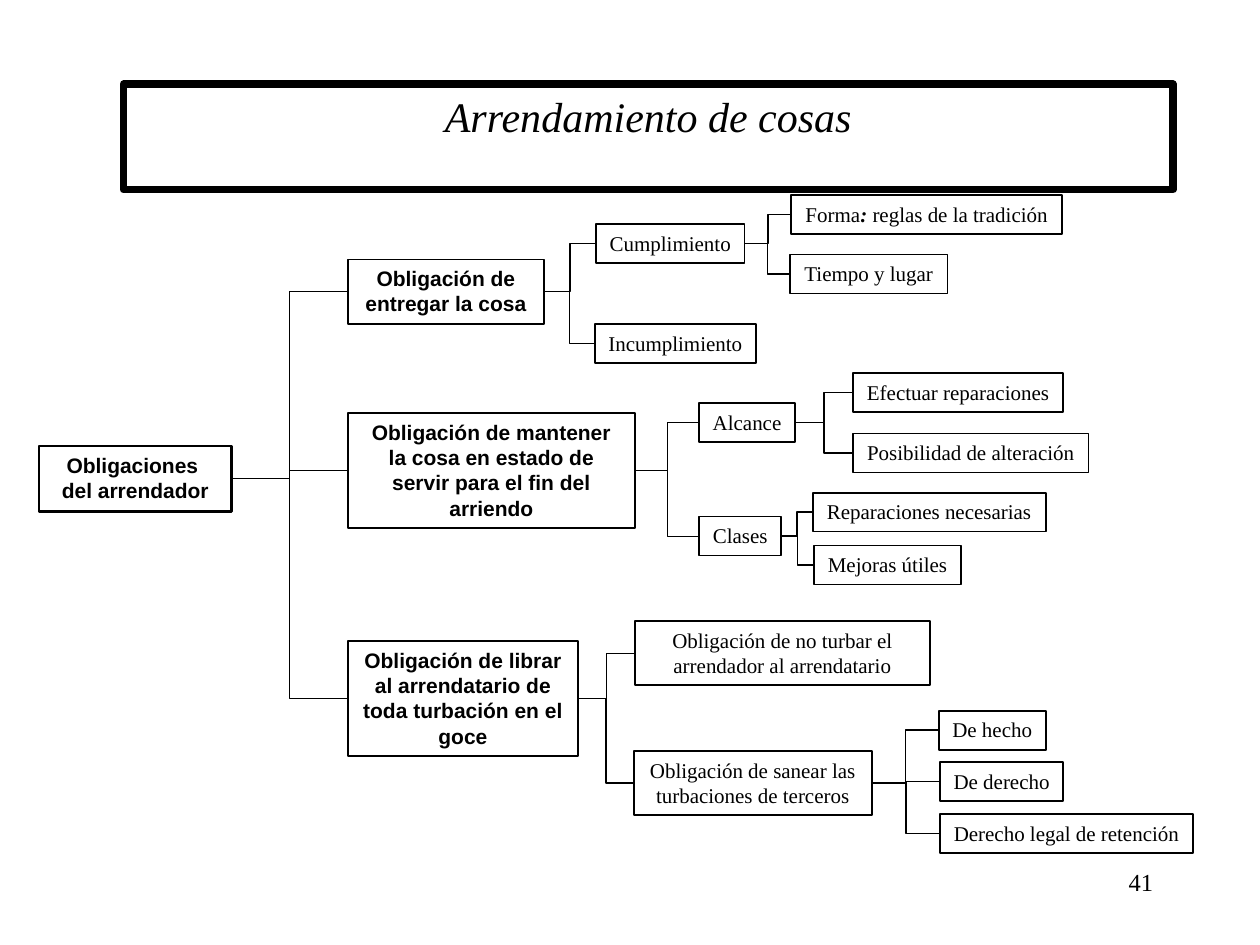
from dataclasses import dataclass

from lxml import etree
from pptx import Presentation
from pptx.dml.color import RGBColor
from pptx.enum.shapes import MSO_CONNECTOR, MSO_SHAPE
from pptx.enum.text import MSO_ANCHOR, MSO_AUTO_SIZE, PP_ALIGN
from pptx.oxml.ns import qn
from pptx.util import Inches, Pt

RECT = MSO_SHAPE.RECTANGLE
ELBOW = MSO_CONNECTOR.ELBOW
TOP = MSO_ANCHOR.TOP
GROW = MSO_AUTO_SIZE.SHAPE_TO_FIT_TEXT
MID, END = PP_ALIGN.CENTER, PP_ALIGN.RIGHT
RIGHT, LEFT = 3, 1  # connection sites of a rectangle

BLACK = "000000"
SERIF = {"name": "Times New Roman", "size": Pt(12), "bold": False, "italic": False}
HEAD = SERIF | {"name": "Arial", "bold": True}
TITLE = SERIF | {"size": Pt(24), "italic": True}
PAGE = SERIF | {"size": Pt(14)}
STRONG = {"bold": True, "italic": True}


@dataclass
class Node:
    key: str
    up: str  # key of the parent, empty for the root
    text: str  # parts between asterisks are strong
    x: float
    y: float
    w: float
    h: float = 0.31
    font: dict = None
    line: float = 1


NODES = [
    Node("root", "", "Obligaciones \ndel arrendador", 0.31, 3.54, 1.53, 0.52, HEAD, 1.5),
    # Delivery
    Node("give", "root", "Obligación de entregar la cosa", 2.76, 2.06, 1.56, 0.51, HEAD),
    Node("done", "give", "Cumplimiento", 4.73, 1.78, 1.18),
    Node("form", "done", "Forma*: *reglas de la tradición", 6.28, 1.55, 2.15),
    Node("time", "done", "Tiempo y lugar", 6.27, 2.02, 1.25),
    Node("fail", "give", "Incumplimiento", 4.72, 2.57, 1.28),
    # Upkeep
    Node("keep", "root", "Obligación de mantener la cosa en estado de servir para el fin del arriendo",
         2.76, 3.28, 2.28, 0.91, HEAD),
    Node("scope", "keep", "Alcance", 5.55, 3.2, 0.76),
    Node("fix", "scope", "Efectuar reparaciones", 6.77, 2.96, 1.67),
    Node("alter", "scope", "Posibilidad de alteración", 6.77, 3.44, 1.87),
    Node("kinds", "keep", "Clases", 5.55, 4.1, 0.65),
    Node("need", "kinds", "Reparaciones necesarias", 6.45, 3.91, 1.85),
    Node("use", "kinds", "Mejoras útiles", 6.46, 4.33, 1.17),
    # Quiet enjoyment
    Node("free", "root", "Obligación de librar al arrendatario de toda turbación en el goce",
         2.76, 5.09, 1.83, 0.91, HEAD),
    Node("calm", "free", "Obligación de no turbar el arrendador al arrendatario", 5.04, 4.93, 2.34, 0.51),
    Node("cure", "free", "Obligación de sanear las turbaciones de terceros", 5.03, 5.96, 1.89, 0.51),
    Node("fact", "cure", "De hecho", 7.45, 5.64, 0.85),
    Node("law", "cure", "De derecho", 7.46, 6.05, 0.98),
    Node("hold", "cure", "Derecho legal de retención", 7.46, 6.46, 2.01),
]


def ink(code: str) -> RGBColor:
    return RGBColor.from_string(code)


def style(item, values: dict) -> None:
    for name, value in values.items():
        setattr(item, name, value)


def write(shape, text: str, font: dict, align=MID, wrap: bool = True) -> None:
    frame = shape.text_frame
    style(frame, {"word_wrap": wrap, "auto_size": GROW, "vertical_anchor": TOP})
    for row, words in enumerate(text.split("\n")):
        para = frame.add_paragraph() if row else frame.paragraphs[0]
        para.alignment = align
        for part, piece in enumerate(words.split("*")):
            run = para.add_run()
            run.text = piece
            style(run.font, font | (STRONG if part % 2 else {}))
            run.font.color.rgb = ink(BLACK)


def edge(shape, width: float) -> None:
    shape.line.color.rgb = ink(BLACK)
    shape.line.width = Pt(width)


def box(slide, node: Node):
    shape = slide.shapes.add_shape(RECT, *map(Inches, (node.x, node.y, node.w, node.h)))
    shape.shadow.inherit = False
    shape.fill.background()
    edge(shape, node.line)
    write(shape, node.text, node.font or SERIF, wrap=node.h > 0.31)
    return shape


def link(slide, start, stop) -> None:
    line = slide.shapes.add_connector(ELBOW, 0, 0, 0, 0)
    line.begin_connect(start, RIGHT)
    line.end_connect(stop, LEFT)
    edge(line, 0.75)
    etree.SubElement(line._element.spPr, qn("a:effectLst"))


def main() -> None:
    deck = Presentation()
    deck.slide_width, deck.slide_height = Inches(10), Inches(7.5)
    slide = deck.slides.add_slide(deck.slide_layouts[5])

    # Title and page number
    title = slide.shapes.title
    style(title, {"left": Inches(0.98), "top": Inches(0.67),
                  "width": Inches(8.33), "height": Inches(0.56)})
    edge(title, 4.5)
    write(title, "Arrendamiento de cosas", TITLE)
    page = slide.shapes.add_textbox(*map(Inches, (7.17, 6.83, 2.08, 0.5)))
    write(page, "41", PAGE, END)

    # Tree: each parent comes before its children
    boxes = {}
    for node in NODES:
        boxes[node.key] = box(slide, node)
        if node.up:
            link(slide, boxes[node.up], boxes[node.key])

    deck.save("out.pptx")


if __name__ == "__main__":
    main()
